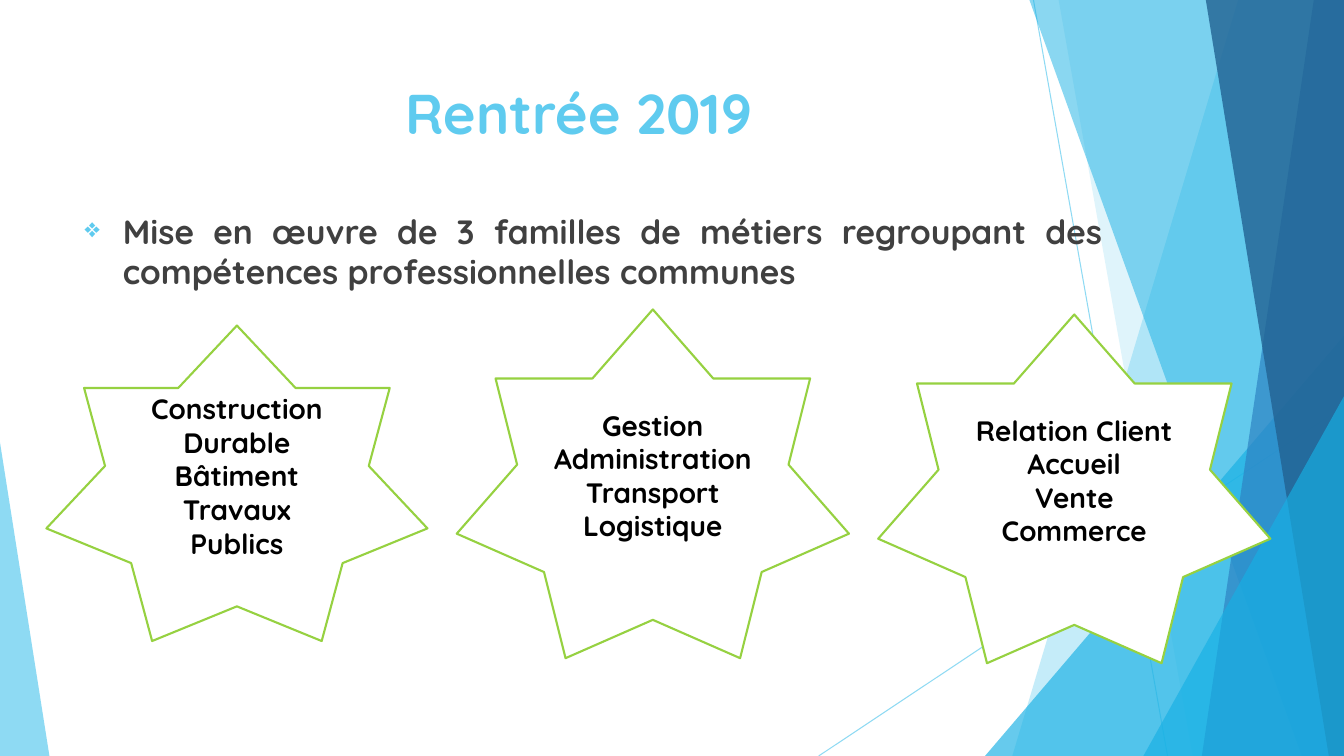
from dataclasses import dataclass

from lxml.etree import SubElement
from pptx import Presentation
from pptx.dml.color import RGBColor
from pptx.enum.shapes import MSO_CONNECTOR, MSO_SHAPE
from pptx.enum.text import MSO_ANCHOR, PP_ALIGN
from pptx.oxml.ns import qn
from pptx.util import Inches, Pt


@dataclass(frozen=True)
class Theme:
    font: str = "Quicksand"
    sky: str = "5FCBEF"
    azure: str = "17B0E4"
    blue: str = "2E83C3"
    navy: str = "226292"
    green: str = "96D141"
    white: str = "FFFFFF"
    grey: str = "404040"
    black: str = "000000"
    title_size: int = 40
    body_size: int = 24
    star_size: int = 20


THEME = Theme()
WIDTH, HEIGHT = 13.33, 7.5

TITLE = "Rentrée 2019"
TITLE_BOX = (1.04, 0.73, 9.4, 0.97)
INTRO = "Mise en œuvre de 3 familles de métiers regroupant des compétences professionnelles communes"
INTRO_BOX = (0.74, 2.04, 10.29, 4.24)

FAMILIES = [
    ((0.46, 3.23, 3.78, 3.13), ["Construction", "Durable", "Bâtiment", "Travaux", "Publics"]),
    ((8.71, 3.12, 3.89, 3.46), ["Relation Client", "Accueil", "Vente", "Commerce"]),
    ((4.53, 3.07, 3.89, 3.46), ["Gestion", "Administration", "Transport", "Logistique"]),
]

RAYS = [(10.25, 0, 11.58, HEIGHT), (WIDTH, 4.03, 8.12, HEIGHT)]
# Facets reach the right edge: (x at top, x at bottom).
# Triangles stand on the bottom edge: (left, top, right, apex).
BACKDROP = [
    ("facet", (12.28, 10.04), THEME.sky, 36),
    ("facet", (10.5, 11.83), THEME.sky, 20),
    ("triangle", (9.77, 3.33, WIDTH, 1), THEME.azure, 66),
    ("facet", (10.21, 12.91), THEME.azure, 50),
    ("facet", (13.03, 11.92), THEME.blue, 70),
    ("facet", (11.96, 13.18), THEME.navy, 80),
    ("triangle", (11.34, 3.93, WIDTH, 1), THEME.azure, 66),
    ("triangle", (0, 4.39, 0.49, 0), THEME.sky, 70),
]


def inches(values):
    return [Inches(value) for value in values]


def rgb(color):
    return RGBColor.from_string(color)


def set_opacity(shape, percent):
    """Make the shape's only solid colour, fill or line, partly transparent."""
    color = next(shape._element.spPr.iter(qn("a:srgbClr")))
    SubElement(color, qn("a:alpha"), val=str(percent * 1000))


def add_run(paragraph, text, size, color):
    run = paragraph.add_run()
    run.text = text
    run.font.name = THEME.font
    run.font.size = Pt(size)
    run.font.bold = True
    run.font.color.rgb = rgb(color)


def add_ray(slide, ends):
    ray = slide.shapes.add_connector(MSO_CONNECTOR.STRAIGHT, *inches(ends))
    ray.line.color.rgb = rgb(THEME.sky)
    ray.line.width = Pt(0.75)
    set_opacity(ray, 70)
    SubElement(ray._element.spPr, qn("a:effectLst"))


def add_pane(slide, kind, geometry, color, opacity):
    if kind == "facet":
        top_x, bottom_x = geometry
        builder = slide.shapes.build_freeform(Inches(top_x), 0)
        corners = [(WIDTH, 0), (WIDTH, HEIGHT), (bottom_x, HEIGHT)]
        builder.add_line_segments([inches(corner) for corner in corners])
        pane = builder.convert_to_shape()
    else:
        left, top, right, apex = geometry
        box = (left, top, right - left, HEIGHT - top)
        pane = slide.shapes.add_shape(MSO_SHAPE.ISOSCELES_TRIANGLE, *inches(box))
        pane.adjustments[0] = apex
    pane.shadow.inherit = False
    pane.fill.solid()
    pane.fill.fore_color.rgb = rgb(color)
    pane.line.fill.background()
    set_opacity(pane, opacity)


def add_title(slide):
    title = slide.shapes.title
    title.left, title.top, title.width, title.height = inches(TITLE_BOX)
    title.text_frame.vertical_anchor = MSO_ANCHOR.TOP
    paragraph = title.text_frame.paragraphs[0]
    paragraph.alignment = PP_ALIGN.CENTER
    add_run(paragraph, TITLE, THEME.title_size, THEME.sky)


def add_intro(slide):
    frame = slide.shapes.add_textbox(*inches(INTRO_BOX)).text_frame
    frame.word_wrap = True
    paragraph = frame.paragraphs[0]
    paragraph.alignment = PP_ALIGN.JUSTIFY
    paragraph.space_before = Pt(10)
    add_run(paragraph, INTRO, THEME.body_size, THEME.grey)
    properties = paragraph._p.get_or_add_pPr()
    indent = Inches(0.38)
    properties.set("marL", str(indent))
    properties.set("indent", str(-indent))
    bullet_color = SubElement(properties, qn("a:buClr"))
    SubElement(bullet_color, qn("a:srgbClr"), val=THEME.sky)
    SubElement(properties, qn("a:buSzPct"), val="80000")
    SubElement(properties, qn("a:buChar"), char="❖")


def add_family(slide, box, trades):
    star = slide.shapes.add_shape(MSO_SHAPE.STAR_7_POINT, *inches(box))
    star.shadow.inherit = False
    star.fill.solid()
    star.fill.fore_color.rgb = rgb(THEME.white)
    star.line.color.rgb = rgb(THEME.green)
    star.line.width = Pt(1.5)
    frame = star.text_frame
    frame.word_wrap = True
    frame.vertical_anchor = MSO_ANCHOR.MIDDLE
    paragraph = frame.paragraphs[0]
    paragraph.alignment = PP_ALIGN.CENTER
    for index, trade in enumerate(trades):
        if index:
            paragraph.add_line_break()
        add_run(paragraph, trade, THEME.star_size, THEME.black)


def main():
    presentation = Presentation()
    presentation.slide_width, presentation.slide_height = inches((WIDTH, HEIGHT))
    slide = presentation.slides.add_slide(presentation.slide_layouts[5])
    for ends in RAYS:
        add_ray(slide, ends)
    for pane in BACKDROP:
        add_pane(slide, *pane)
    add_title(slide)
    add_intro(slide)
    for box, trades in FAMILIES:
        add_family(slide, box, trades)
    presentation.save("out.pptx")


if __name__ == "__main__":
    main()
